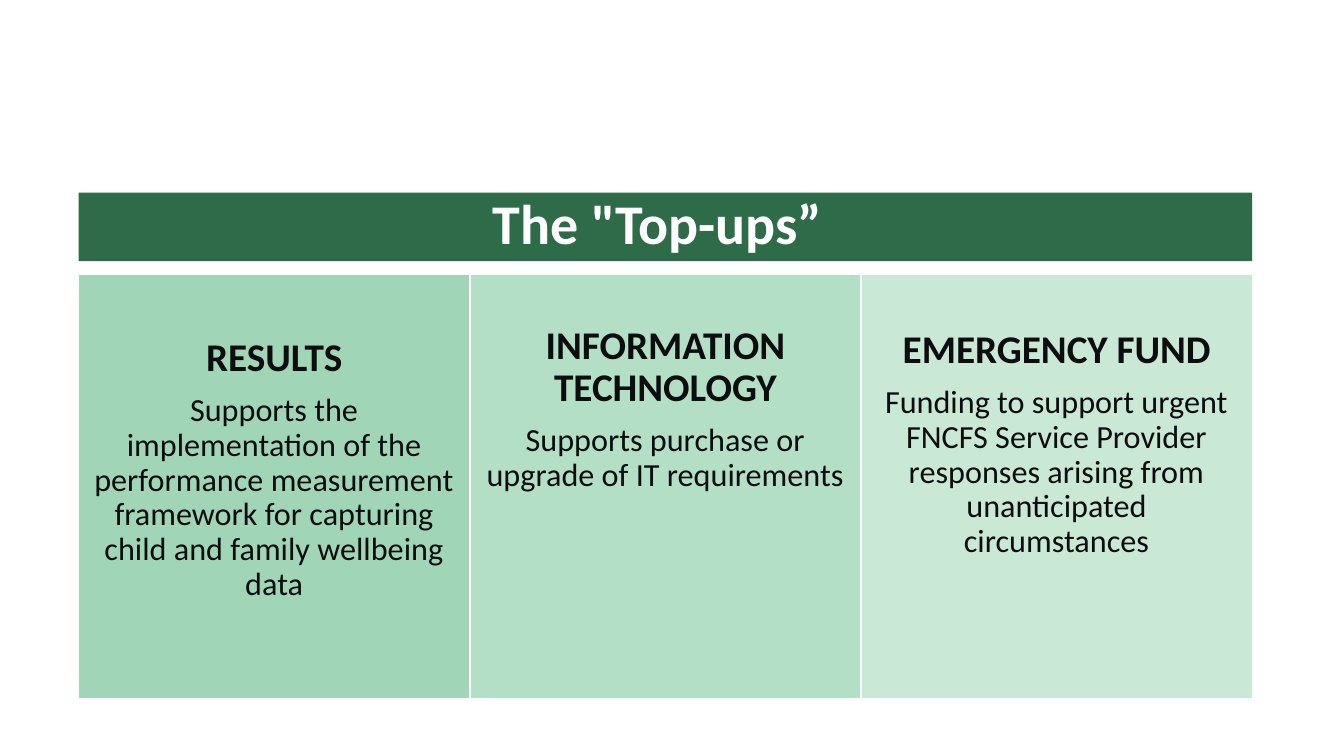
from lxml.etree import SubElement
from pptx import Presentation
from pptx.dml.color import RGBColor
from pptx.enum.shapes import MSO_SHAPE as Shape
from pptx.enum.text import MSO_ANCHOR as Anchor, PP_ALIGN as Align
from pptx.oxml.ns import qn
from pptx.util import Inches, Pt


def rgb(value):
    return RGBColor.from_string(value)


class TopUpSlide:
    """Draws the banner and funding panels in one shared style."""

    FONT = "Calibri"
    WHITE, INK, BANNER, PANEL = "FFFFFF", "0D0D0D", "2E6C49", "78C699"

    def __init__(self, slide):
        self.slide = slide

    def block(self, left, top, width, height, fill):
        block = self.slide.shapes.add_shape(
            Shape.RECTANGLE, Inches(left), Inches(top), Inches(width), Inches(height))
        block.shadow.inherit = False
        block.fill.solid()
        block.fill.fore_color.rgb = rgb(fill)
        return block

    def frame(self, block, anchor, left, top, right, bottom):
        frame = block.text_frame
        settings = {
            "word_wrap": True,
            "vertical_anchor": anchor,
            "margin_left": Inches(left),
            "margin_top": Inches(top),
            "margin_right": Inches(right),
            "margin_bottom": Inches(bottom),
        }
        for name, value in settings.items():
            setattr(frame, name, value)
        return frame

    def fill_paragraph(self, paragraph, text, size, color, bold=False, space_after=0):
        paragraph.text = text
        layout = {"alignment": Align.CENTER, "line_spacing": 0.9,
                  "space_after": Pt(space_after)}
        for name, value in layout.items():
            setattr(paragraph, name, value)
        font = paragraph.runs[0].font
        for name, value in {"name": self.FONT, "size": Pt(size), "bold": bold}.items():
            setattr(font, name, value)
        font.color.rgb = rgb(color)

    def banner(self, text, left, top, width, height):
        block = self.block(left, top, width, height, self.BANNER)
        block.line.fill.background()
        frame = self.frame(block, Anchor.MIDDLE, 0.17, 0, 0.33, 0)
        self.fill_paragraph(frame.paragraphs[0], text, 40, self.WHITE, bold=True)

    def panel(self, heading, detail, opacity, text_top, left, top, width, height):
        block = self.block(left, top, width, height, self.PANEL)
        tint = block.element.spPr.find(qn("a:solidFill"))[0]
        SubElement(tint, qn("a:alpha")).set("val", str(opacity * 1000))
        block.line.color.rgb = rgb(self.WHITE)
        block.line.width = Pt(1)
        frame = self.frame(block, Anchor.TOP, 0.12, text_top, 0.12, 0.12)
        self.fill_paragraph(frame.paragraphs[0], heading, 28, self.INK, True, 9.8)
        self.fill_paragraph(frame.add_paragraph(), detail, 23, self.INK)


def main():
    deck = Presentation()
    deck.slide_width, deck.slide_height = Inches(13.33), Inches(7.5)
    top_ups = TopUpSlide(deck.slides.add_slide(deck.slide_layouts[6]))

    left, panel_width = 0.78, 3.88
    top_ups.banner('The "Top-ups”', left, 1.91, 3 * panel_width, 0.68)
    funds = [
        ("RESULTS",
         "Supports the implementation of the performance measurement framework "
         "for capturing child and family wellbeing data", 0.63),
        ("INFORMATION TECHNOLOGY",
         "Supports purchase or upgrade of IT requirements", 0.51),
        ("EMERGENCY FUND",
         "Funding to support urgent FNCFS Service Provider responses arising "
         "from unanticipated circumstances", 0.55),
    ]
    for column, (heading, detail, text_top) in enumerate(funds):
        top_ups.panel(heading, detail, 70 - 15 * column, text_top,
                      left + column * panel_width, 2.72, panel_width, 4.21)
    deck.save("out.pptx")


if __name__ == "__main__":
    main()
